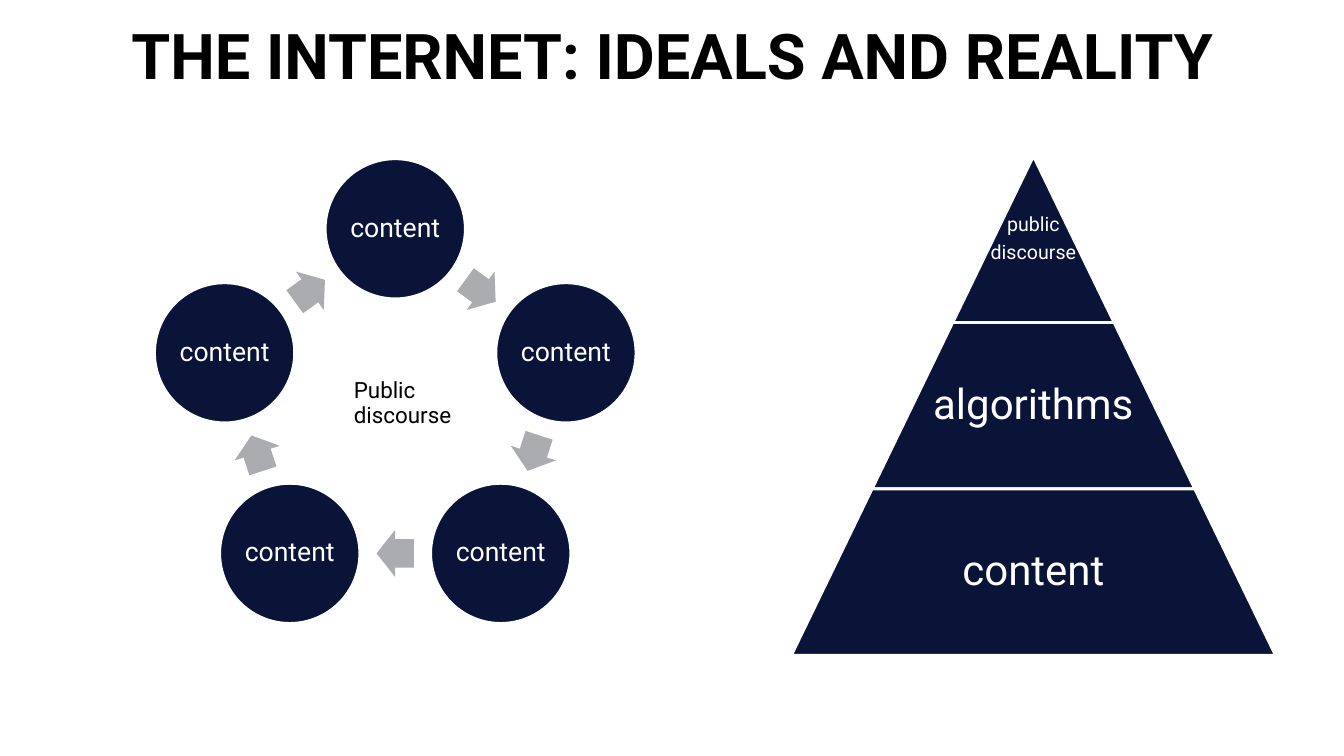
"""Builds a slide contrasting a ring of content with a pyramid of control."""
from dataclasses import dataclass
from math import cos, radians, sin

from pptx import Presentation
from pptx.dml.color import RGBColor
from pptx.enum.shapes import MSO_SHAPE as Shape
from pptx.enum.text import MSO_ANCHOR as Anchor, MSO_AUTO_SIZE as AutoSize, PP_ALIGN as Align
from pptx.util import Inches, Pt

TITLE = "THE INTERNET: IDEALS AND REALITY"
RING_LABELS = ["content"] * 5
RING_CENTRE_LABEL = "Public discourse"


@dataclass(frozen=True)
class Theme:
    font: str = "Roboto"
    navy: RGBColor = RGBColor(0x0A, 0x14, 0x39)
    grey: RGBColor = RGBColor(0xAB, 0xAC, 0xAF)
    white: RGBColor = RGBColor(0xFF, 0xFF, 0xFF)
    black: RGBColor = RGBColor(0, 0, 0)
    title: int = 45
    layer: int = 30
    circle: int = 19
    centre: int = 16
    peak: int = 14
    outline: int = 2


THEME = Theme()
PYRAMID_LAYERS = [
    (["public", "discourse"], THEME.peak),
    (["algorithms"], THEME.layer),
    (["content"], THEME.layer),
]

RING_X, RING_Y, RING_RADIUS = 3.92, 4.05, 1.78
CIRCLE_SIZE = 1.39
ARROW_WIDTH, ARROW_HEIGHT = 0.37, 0.47
PYRAMID_X, PYRAMID_TOP = 10.25, 1.55
LAYER_HEIGHT, LAYER_SLANT = 1.65, 0.8


def box_at(centre_x, centre_y, width, height):
    return [Inches(v) for v in (centre_x - width / 2, centre_y - height / 2, width, height)]


def write(holder, lines, size, color, align=Align.CENTER, anchor=Anchor.MIDDLE,
          spacing=0.9, inset=0.03, bold=False):
    frame = holder.text_frame
    frame.text = "\n".join(lines)
    frame.word_wrap = True
    frame.auto_size = AutoSize.NONE
    frame.vertical_anchor = anchor
    frame.margin_left = frame.margin_right = Inches(inset)
    frame.margin_top = frame.margin_bottom = Inches(inset)
    for index, paragraph in enumerate(frame.paragraphs):
        paragraph.alignment = align
        paragraph.line_spacing = spacing
        paragraph.space_before = Pt(0.35 * size if index else 0)
        font = paragraph.font
        font.name, font.size, font.bold = THEME.font, Pt(size), bold
        font.color.rgb = color


def add_figure(shapes, preset, box, fill, outlined=True):
    figure = shapes.add_shape(preset, *box)
    figure.shadow.inherit = False
    figure.fill.solid()
    figure.fill.fore_color.rgb = fill
    if outlined:
        figure.line.color.rgb = THEME.white
        figure.line.width = Pt(THEME.outline)
    else:
        figure.line.fill.background()
    return figure


def add_pyramid(slide):
    shapes = slide.shapes.add_group_shape().shapes
    for index, (lines, size) in enumerate(PYRAMID_LAYERS):
        width = 2 * LAYER_SLANT * (index + 1)
        middle = PYRAMID_TOP + LAYER_HEIGHT * (index + 0.5)
        box = box_at(PYRAMID_X, middle, width, LAYER_HEIGHT)
        layer = add_figure(shapes, Shape.TRAPEZOID, box, THEME.navy)
        layer.adjustments[0] = LAYER_SLANT / min(width, LAYER_HEIGHT)
        write(shapes.add_textbox(*box), lines, size, THEME.white)


def add_ring(slide):
    shapes = slide.shapes.add_group_shape().shapes
    step = 360 / len(RING_LABELS)
    arrow_radius = RING_RADIUS * cos(radians(step / 2))

    def ring_box(angle, radius, width, height):
        turn = radians(angle)
        return box_at(RING_X + radius * sin(turn), RING_Y - radius * cos(turn), width, height)

    for index, label in enumerate(RING_LABELS):
        angle = index * step
        circle = add_figure(shapes, Shape.OVAL,
                            ring_box(angle, RING_RADIUS, CIRCLE_SIZE, CIRCLE_SIZE), THEME.navy)
        write(circle, [label], THEME.circle, THEME.white)
        arrow_angle = angle + step / 2
        arrow = add_figure(shapes, Shape.RIGHT_ARROW,
                           ring_box(arrow_angle, arrow_radius, ARROW_WIDTH, ARROW_HEIGHT),
                           THEME.grey, outlined=False)
        arrow.adjustments[0], arrow.adjustments[1] = 0.6, 0.5
        arrow.rotation = arrow_angle


def main():
    deck = Presentation()
    deck.slide_width, deck.slide_height = Inches(13.33), Inches(7.5)
    slide = deck.slides.add_slide(deck.slide_layouts[5])

    title = slide.shapes.title
    title.left, title.top, title.width, title.height = [
        Inches(v) for v in (0.35, 0.25, 12.64, 0.82)]
    write(title, [TITLE], THEME.title, THEME.black, anchor=Anchor.TOP,
          spacing=0.89, inset=0, bold=True)

    add_pyramid(slide)
    add_ring(slide)

    centre = slide.shapes.add_textbox(*[Inches(v) for v in (3.51, 3.75, 1.18, 0.51)])
    write(centre, [RING_CENTRE_LABEL], THEME.centre, THEME.black, align=Align.LEFT,
          anchor=Anchor.TOP, spacing=0.95, inset=0)
    centre.text_frame.auto_size = AutoSize.SHAPE_TO_FIT_TEXT

    deck.save("out.pptx")


if __name__ == "__main__":
    main()
